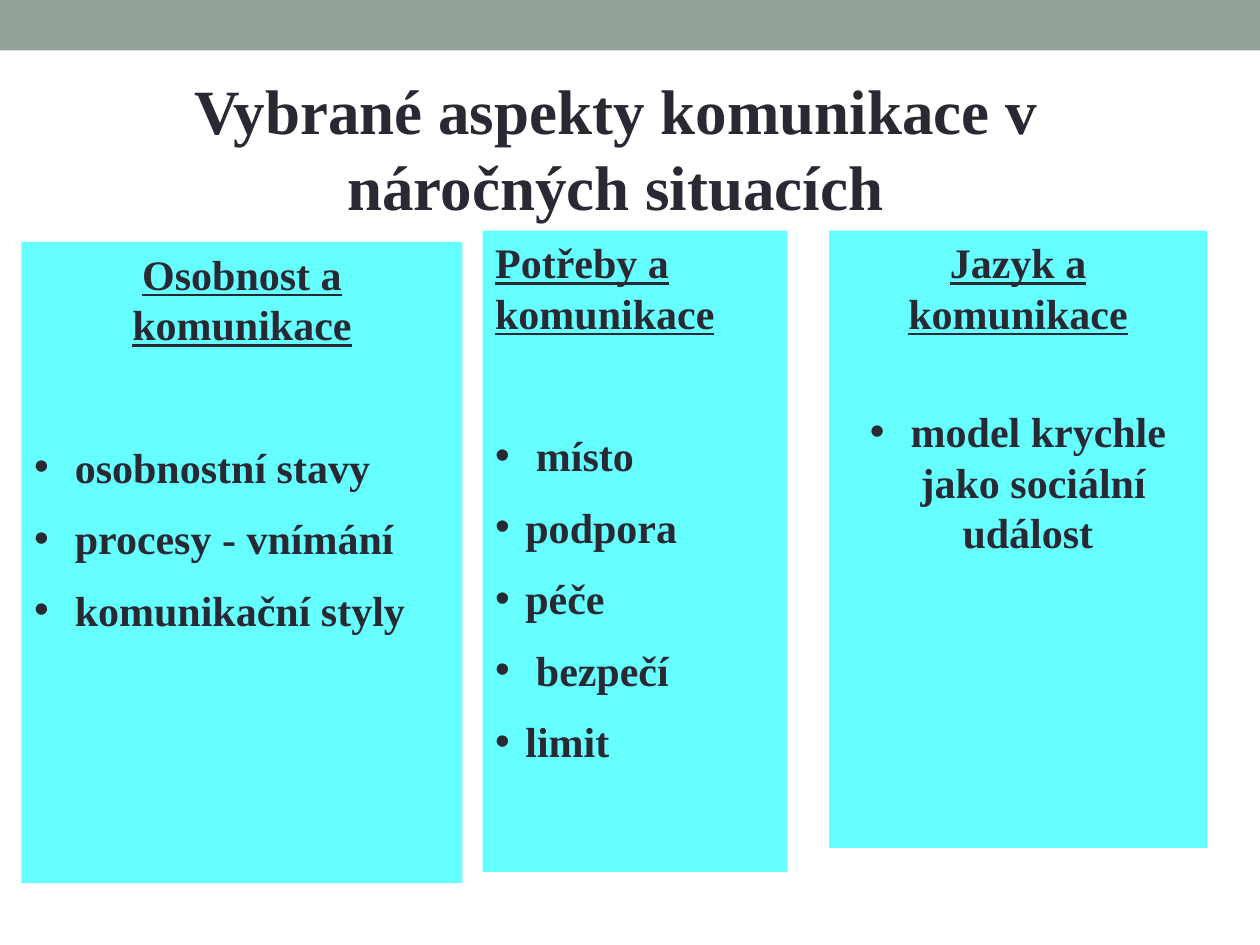
import pptx
import pptx.dml.color
import pptx.enum.shapes
import pptx.enum.text
import pptx.oxml.ns
import pptx.util
from lxml import etree

Inches = pptx.util.Inches
Pt = pptx.util.Pt
ALIGN = pptx.enum.text.PP_ALIGN
FONT = "Times New Roman"
INK = "292934"
BAND = "93A299"
PANEL = "66FFFF"
BULLET_INDENT = 0.24

# Box, heading alignment, list alignment, gap above the list in points
PANELS = [
    {"box": (0.17, 1.92, 3.5, 5.09), "heading": "Osobnost a komunikace",
     "alignments": (ALIGN.CENTER, ALIGN.LEFT), "gap": 52.7,
     "items": [" osobnostní stavy", " procesy - vnímání", " komunikační styly"]},
    {"box": (6.58, 1.83, 3, 4.9), "heading": "Jazyk a komunikace",
     "alignments": (ALIGN.CENTER, ALIGN.CENTER), "gap": 39,
     "items": [" model krychle jako sociální událost "]},
    {"box": (3.83, 1.83, 2.42, 5.09), "heading": "Potřeby a komunikace",
     "alignments": (ALIGN.LEFT, ALIGN.LEFT), "gap": 52.7,
     "items": [" místo", "podpora", "péče", " bezpečí", "limit"]},
]


def color(hex_string):
    return pptx.dml.color.RGBColor.from_string(hex_string)


def set_values(target, values):
    for name, value in values.items():
        setattr(target, name, value)


def place(shape, box):
    names = ("left", "top", "width", "height")
    set_values(shape, dict(zip(names, map(Inches, box))))


def fill_shape(shape, hex_string):
    shape.fill.solid()
    shape.fill.fore_color.rgb = color(hex_string)
    shape.line.fill.background()


def prepare_frame(shape):
    frame = shape.text_frame
    set_values(frame, {
        "word_wrap": True,
        "auto_size": pptx.enum.text.MSO_AUTO_SIZE.NONE,
        "vertical_anchor": pptx.enum.text.MSO_ANCHOR.TOP,
        "margin_left": Inches(0.1), "margin_right": Inches(0.1),
        "margin_top": Inches(0.05), "margin_bottom": Inches(0.05),
    })
    return frame


def write_paragraph(paragraph, text, size, alignment, before=0,
                    underline=False, bullet=False):
    set_values(paragraph, {"alignment": alignment, "line_spacing": 1.0,
                           "space_before": Pt(before), "space_after": Pt(0)})
    run = paragraph.add_run()
    run.text = text
    set_values(run.font, {"name": FONT, "size": Pt(size), "bold": True,
                          "underline": underline})
    run.font.color.rgb = color(INK)

    # Bullet and hanging indent
    indent = Inches(BULLET_INDENT) if bullet else 0
    properties = paragraph._p.get_or_add_pPr()
    properties.set("marL", str(indent))
    properties.set("indent", str(-indent))
    qn = pptx.oxml.ns.qn
    if bullet:
        etree.SubElement(properties, qn("a:buFont")).set("typeface", "Arial")
        etree.SubElement(properties, qn("a:buChar")).set("char", "•")
    else:
        etree.SubElement(properties, qn("a:buNone"))


def add_band(slide, box):
    band = slide.shapes.add_shape(pptx.enum.shapes.MSO_SHAPE.RECTANGLE,
                                  *map(Inches, box))
    band.shadow.inherit = False
    fill_shape(band, BAND)


def fill_title(title, box, text):
    place(title, box)
    frame = prepare_frame(title)
    write_paragraph(frame.paragraphs[0], text, 36, ALIGN.CENTER)


def fill_panel(body, box, heading, items, alignments, gap):
    place(body, box)
    fill_shape(body, PANEL)
    frame = prepare_frame(body)
    heading_alignment, list_alignment = alignments
    write_paragraph(frame.paragraphs[0], heading, 24, heading_alignment,
                    underline=True)
    for index, item in enumerate(items):
        write_paragraph(frame.add_paragraph(), item, 24, list_alignment,
                        before=12 if index else gap, bullet=True)


def main():
    presentation = pptx.Presentation()
    set_values(presentation, {"slide_width": Inches(10),
                              "slide_height": Inches(7.5)})
    # The comparison layout offers a title and four bodies
    slide = presentation.slides.add_slide(presentation.slide_layouts[4])
    title, *bodies = slide.placeholders

    add_band(slide, (0, 0, 10, 0.4))
    # The title sits high enough to keep its last line clear of the panels
    fill_title(title, (0.67, 0.52, 8.43, 1.3),
               "Vybrané aspekty komunikace v náročných situacích")
    for body, panel in zip(bodies, PANELS):
        fill_panel(body, **panel)

    # Remove the body that is not needed
    for body in bodies[len(PANELS):]:
        body.element.getparent().remove(body.element)

    presentation.save("out.pptx")


if __name__ == "__main__":
    main()
